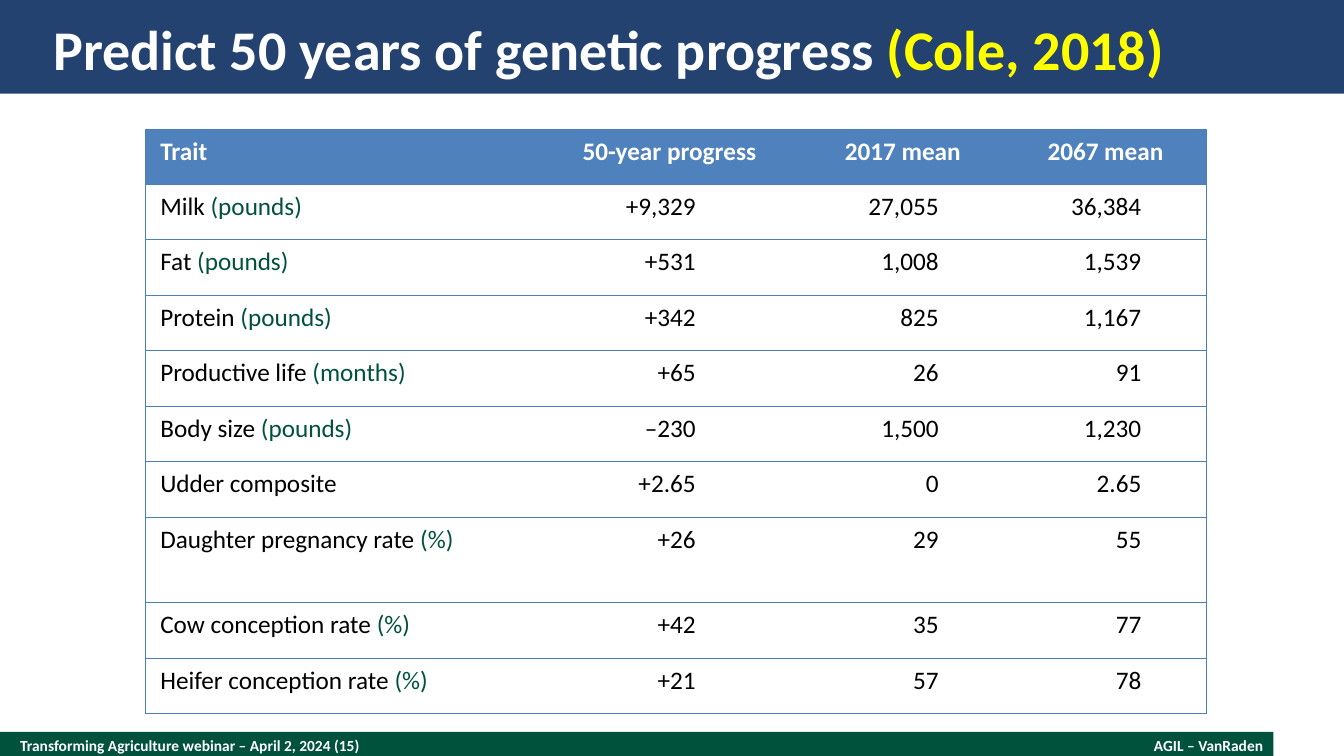
"""Build the slide on 50 years of predicted genetic progress."""
from lxml import etree
from pptx import Presentation
from pptx import util as u
from pptx.dml.color import RGBColor
from pptx.enum import shapes, text
from pptx.oxml.ns import qn

WHITE, BLACK, GREEN, NAVY = "FFFFFF", "000000", "00523C", "244270"
YELLOW, HEADER, BORDER = "FFFF00", "4F81BD", "4B7EBC"
LEFT, CENTER, RIGHT = text.PP_ALIGN.LEFT, text.PP_ALIGN.CENTER, text.PP_ALIGN.RIGHT


def rgb(color):
    return RGBColor.from_string(color)


def write(p, parts, size, bold, align=LEFT):
    p.alignment = align
    for words, color in parts:
        r = p.add_run()
        r.text = words
        r.font.name, r.font.size, r.font.bold = "Calibri", u.Pt(size), bold
        r.font.color.rgb = rgb(color)


prs = Presentation()
prs.slide_width, prs.slide_height = u.Inches(13.33), u.Inches(7.5)
s = prs.slides.add_slide(prs.slide_layouts[5])

title = s.shapes.title
title.left, title.top = u.Inches(0.53), u.Inches(0.13)
title.width, title.height = u.Inches(12.27), u.Inches(0.7)
write(title.text_frame.paragraphs[0],
      [("Predict 50 years of genetic progress ", WHITE), ("(Cole, 2018)", YELLOW)], 40, True)

for top, width, height, color in [(7.26, 12.63, 0.27, GREEN), (0, 13.33, 0.93, NAVY)]:
    bar = s.shapes.add_shape(shapes.MSO_SHAPE.RECTANGLE, 0, u.Inches(top),
                             u.Inches(width), u.Inches(height))
    bar.shadow.inherit = False
    bar.fill.solid()
    bar.fill.fore_color.rgb = rgb(color)
    bar.line.fill.background()
    title.element.addprevious(bar.element)

frames = [title.text_frame]
for words, left, top, width, height, align in [
        ("Transforming Agriculture webinar – April 2, 2024 (15)", 0.2, 7.26, 8.67, 0.27, LEFT),
        ("AGIL – VanRaden", 9.6, 7.3, 2.93, 0.19, RIGHT)]:
    sp = s.shapes.add_textbox(*map(u.Inches, (left, top, width, height)))
    write(sp.text_frame.paragraphs[0], [(words, WHITE)], 11, True, align)
    frames.append(sp.text_frame)

for tf in frames:
    tf.word_wrap = True
    tf.auto_size = text.MSO_AUTO_SIZE.NONE
    tf.vertical_anchor = text.MSO_ANCHOR.MIDDLE
    tf.margin_left = tf.margin_right = tf.margin_top = tf.margin_bottom = 0

rows = [
    ("Trait", "", "50-year progress", "2017 mean", "2067 mean"),
    ("Milk ", "(pounds)", "+9,329", "27,055", "36,384"),
    ("Fat ", "(pounds)", "+531", "1,008", "1,539"),
    ("Protein ", "(pounds)", "+342", "825", "1,167"),
    ("Productive life ", "(months)", "+65", "26", "91"),
    ("Body size ", "(pounds)", "–230", "1,500", "1,230"),
    ("Udder composite", "", "+2.65", "0", "2.65"),
    ("Daughter pregnancy rate ", "(%)", "+26", "29", "55"),
    ("Cow conception rate ", "(%)", "+42", "35", "77"),
    ("Heifer conception rate ", "(%)", "+21", "57", "78"),
]
widths = [3.89, 2.62, 2.01, 2.01]
right_margins = [0.15, 1.05, 0.65, 0.65]
heights = [0.85 if row[0].startswith("Daughter") else 0.55 for row in rows]

table = s.shapes.add_table(len(rows), len(widths), u.Inches(1.44), u.Inches(1.28),
                           u.Inches(sum(widths)), u.Inches(sum(heights))).table
table.horz_banding = False
for column, width in zip(table.columns, widths):
    column.width = u.Inches(width)

for i, (trait, unit, *values) in enumerate(rows):
    table.rows[i].height = u.Inches(heights[i])
    head = i == 0
    ink = WHITE if head else BLACK
    trait_parts = [(trait, ink)] + ([(unit, GREEN)] if unit else [])
    for j, parts in enumerate([trait_parts] + [[(value, ink)] for value in values]):
        cell = table.cell(i, j)
        cell.margin_left, cell.margin_top = u.Inches(0.15), u.Inches(0.07)
        cell.margin_right = u.Inches(0.15 if head else right_margins[j])
        cell.margin_bottom = u.Inches(0.08)
        align = LEFT if j == 0 else CENTER if head else RIGHT
        write(cell.text_frame.paragraphs[0], parts, 18, head, align)
        if head:
            cell.fill.solid()
            cell.fill.fore_color.rgb = rgb(HEADER)
        else:
            cell.fill.background()
        sides = {"a:lnL": j == 0, "a:lnR": j == len(widths) - 1, "a:lnT": True, "a:lnB": True}
        for k, (tag, shown) in enumerate(sides.items()):
            ln = etree.Element(qn(tag), w=str(u.Pt(0.75)))
            if shown:
                fill = etree.SubElement(ln, qn("a:solidFill"))
                etree.SubElement(fill, qn("a:srgbClr"), val=BORDER)
            else:
                etree.SubElement(ln, qn("a:noFill"))
            cell._tc.tcPr.insert(k, ln)

prs.save("out.pptx")
